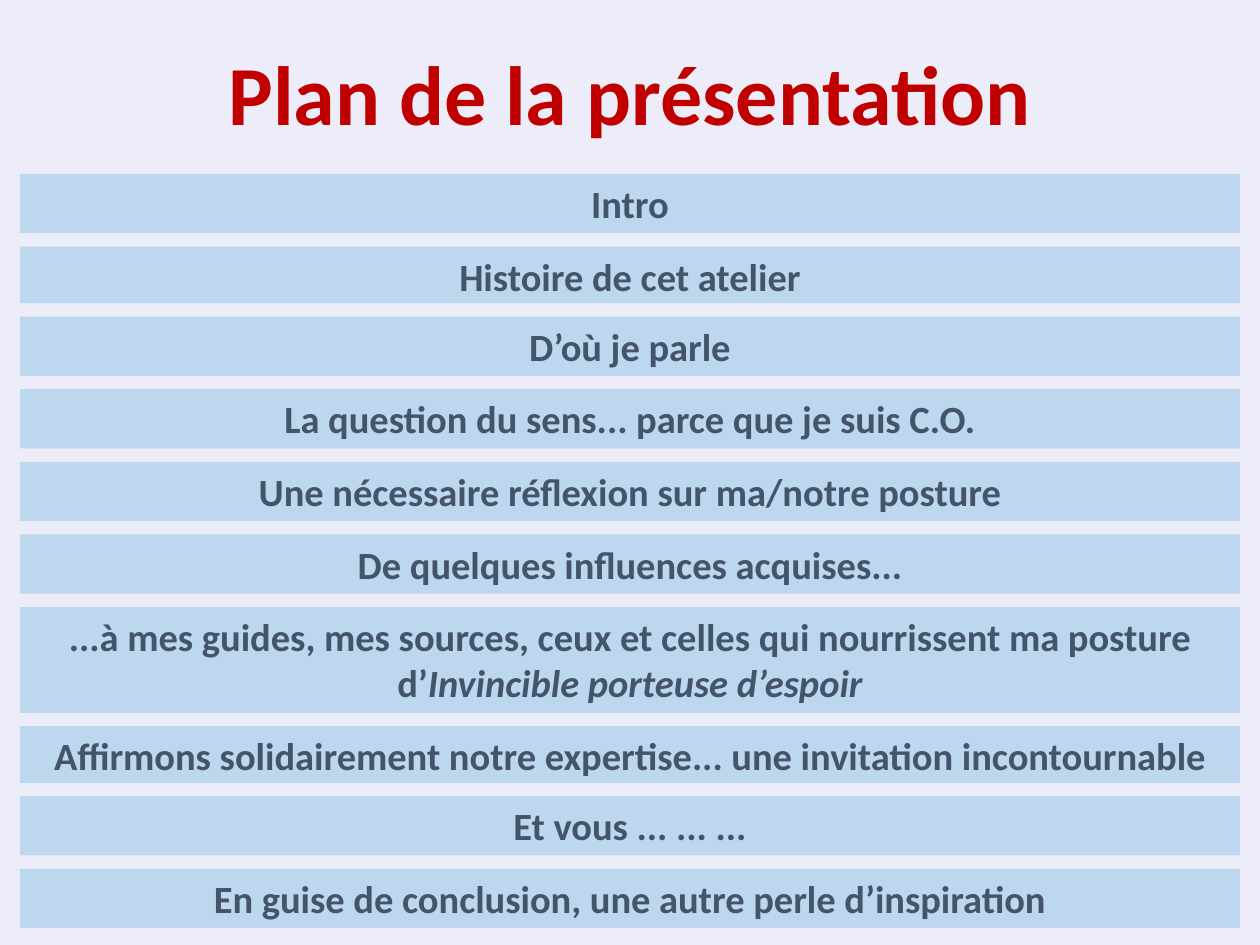
import dataclasses

import pptx
import pptx.dml.color
import pptx.enum.shapes
import pptx.enum.text
import pptx.util

Pt = pptx.util.Pt
ANCHOR = pptx.enum.text.MSO_ANCHOR


@dataclasses.dataclass(frozen=True)
class Theme:
    font: str = "Calibri"
    back: str = "EDEDF9"
    bar: str = "BDD7EE"
    ink: str = "44546A"
    accent: str = "C00000"
    title: float = 48
    body: float = 22


def color(code):
    return pptx.dml.color.RGBColor.from_string(code)


def write(frame, *runs, font, size, ink, anchor=ANCHOR.TOP, spacing=1.0):
    """Fill the frame with one centred bold paragraph; runs are (text, italic)."""
    frame.word_wrap = True
    frame.vertical_anchor = anchor
    para = frame.paragraphs[0]
    para.alignment = pptx.enum.text.PP_ALIGN.CENTER
    para.line_spacing = spacing
    for text, italic in runs:
        run = para.add_run()
        run.text = text
        run.font.name = font
        run.font.size = Pt(size)
        run.font.bold = True
        run.font.italic = italic
        run.font.color.rgb = color(ink)


class Deck:
    def __init__(self, theme, width, height):
        self.theme = theme
        self.file = pptx.Presentation()
        self.file.slide_width = Pt(width)
        self.file.slide_height = Pt(height)
        self.slide = self.file.slides.add_slide(self.file.slide_layouts[6])
        fill = self.slide.background.fill
        fill.solid()
        fill.fore_color.rgb = color(theme.back)

    def title(self, text, *box):
        shape = self.slide.shapes.add_textbox(*map(Pt, box))
        write(shape.text_frame, (text, False), font=self.theme.font,
              size=self.theme.title, ink=self.theme.accent,
              anchor=ANCHOR.BOTTOM, spacing=0.9)

    def bar(self, runs, *box):
        kind = pptx.enum.shapes.MSO_SHAPE.RECTANGLE
        shape = self.slide.shapes.add_shape(kind, *map(Pt, box))
        shape.shadow.inherit = False
        shape.fill.solid()
        shape.fill.fore_color.rgb = color(self.theme.bar)
        shape.line.fill.background()
        write(shape.text_frame, *runs, font=self.theme.font,
              size=self.theme.body, ink=self.theme.ink)


WIDTH, HEIGHT = 720, 540
LEFT, TOP, GAP = 11.4, 99.4, 7.6
FULL, SLIM, DOUBLE = 33.9, 32.4, 60.5

TOPICS = [
    (FULL, "Intro"),
    (SLIM, "Histoire de cet atelier"),
    (FULL, "D’où je parle"),
    (FULL, "La question du sens... parce que je suis C.O."),
    (FULL, "Une nécessaire réflexion sur ma/notre posture"),
    (FULL, "De quelques influences acquises..."),
    (DOUBLE, "...à mes guides, mes sources, ceux et celles qui nourrissent "
             "ma posture d’", "Invincible porteuse d’espoir"),
    (SLIM, "Affirmons solidairement notre expertise... "
           "une invitation incontournable"),
    (FULL, "Et vous ... ... ..."),
    (FULL, "En guise de conclusion, une autre perle d’inspiration"),
]


def main():
    deck = Deck(Theme(), WIDTH, HEIGHT)
    deck.title("Plan de la présentation", 0, 20.2, WIDTH, 65.5)
    top = TOP
    for height, *parts in TOPICS:
        runs = [(text, i > 0) for i, text in enumerate(parts)]
        deck.bar(runs, LEFT, top, WIDTH - 2 * LEFT, height)
        top += height + GAP
    deck.file.save("out.pptx")


if __name__ == "__main__":
    main()
